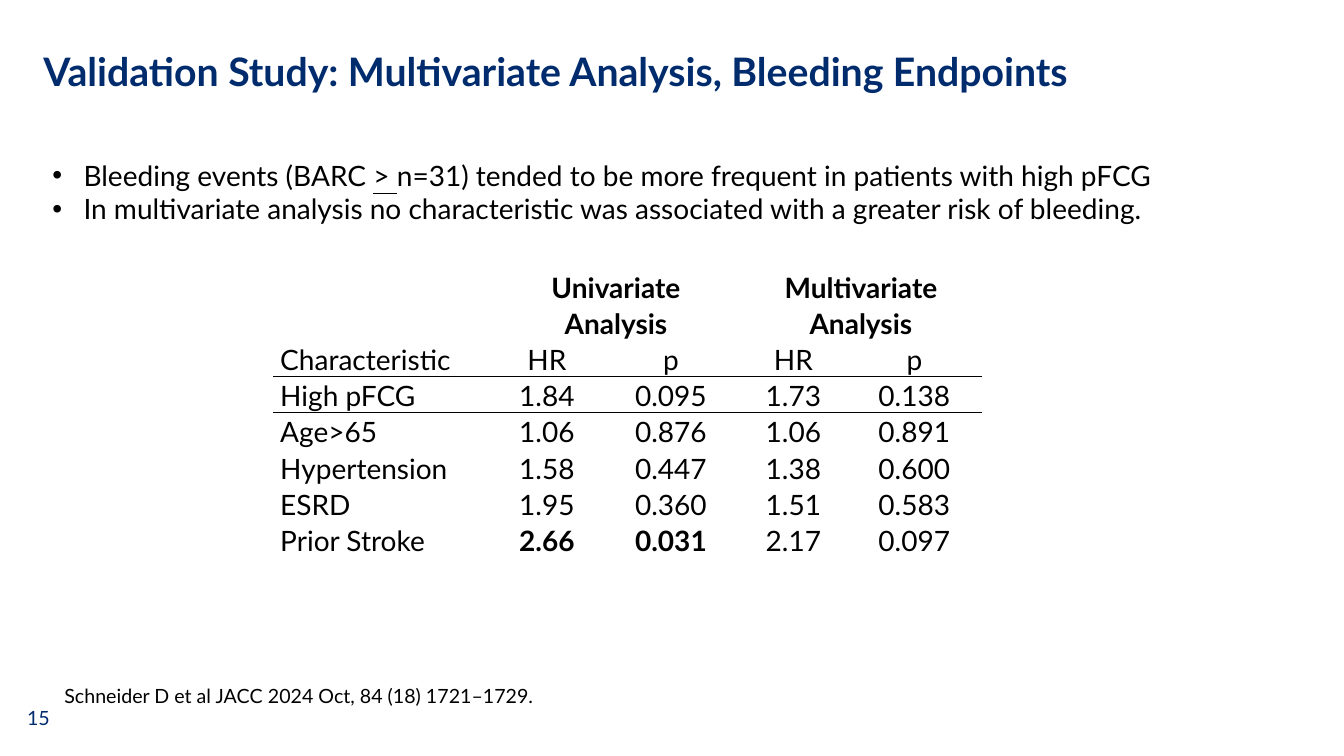
import pptx
import pptx.dml.color
import pptx.enum.shapes
import pptx.enum.text
import pptx.oxml
import pptx.oxml.ns
import pptx.util

Inches = pptx.util.Inches
Pt = pptx.util.Pt
ANCHOR = pptx.enum.text.MSO_ANCHOR
ALIGN = pptx.enum.text.PP_ALIGN
NAVY = pptx.dml.color.RGBColor(0x00, 0x2C, 0x6E)
BLACK = pptx.dml.color.RGBColor(0x00, 0x00, 0x00)
WHITE = pptx.dml.color.RGBColor(0xFF, 0xFF, 0xFF)
NO_GRID_STYLE = "{2D5ABB26-0587-4C30-8999-92F81FD0307C}"


def add_run(paragraph, text, size, color=BLACK, **formats):
    run = paragraph.add_run()
    run.text = text
    run.font.color.rgb = color
    for name, value in {"name": "Lato", "size": Pt(size), **formats}.items():
        setattr(run.font, name, value)


def add_xml(parent, tag, attributes, content="", position=None):
    element = pptx.oxml.parse_xml(
        f"<a:{tag} {pptx.oxml.ns.nsdecls('a')} {attributes}>{content}</a:{tag}>")
    parent.insert(len(parent) if position is None else position, element)


deck = pptx.Presentation()
deck.slide_width, deck.slide_height = Inches(13.33), Inches(7.5)
slide = deck.slides.add_slide(deck.slide_layouts[5])

# Slide number
number = slide.shapes.add_shape(
    pptx.enum.shapes.MSO_SHAPE.RECTANGLE,
    Inches(0.17), Inches(6.92), Inches(0.51), Inches(0.4))
number.shadow.inherit = False
number.fill.solid()
number.fill.fore_color.rgb = WHITE
number.line.fill.background()
number.text_frame.vertical_anchor = ANCHOR.MIDDLE
number.text_frame.paragraphs[0].alignment = ALIGN.LEFT
add_run(number.text_frame.paragraphs[0], "15", 14, NAVY)

# Title
title = slide.shapes.title
place = {"left": 0.33, "top": 0.23, "width": 12.94, "height": 1}
for side, length in place.items():
    setattr(title, side, Inches(length))
title.text_frame.auto_size = pptx.enum.text.MSO_AUTO_SIZE.NONE
title.text_frame.vertical_anchor = ANCHOR.MIDDLE
heading = title.text_frame.paragraphs[0]
heading.alignment = ALIGN.LEFT
heading.line_spacing = 0.9
add_run(heading, "Validation Study: Multivariate Analysis, Bleeding Endpoints",
        28, NAVY, bold=True)

# Citation
citation = slide.shapes.add_textbox(
    Inches(0.54), Inches(6.74), Inches(9.2), Inches(0.34)).text_frame
citation.word_wrap = True
add_run(citation.paragraphs[0],
        "Schneider D et al JACC\u00a02024 Oct, 84 (18) 1721–1729.", 14)

# Hazard ratio table
rows = [
    ("", "Univariate Analysis", "", "Multivariate Analysis", ""),
    ("Characteristic", "HR", "p", "HR", "p"),
    ("High pFCG", "1.84", "0.095", "1.73", "0.138"),
    ("Age>65", "1.06", "0.876", "1.06", "0.891"),
    ("Hypertension", "1.58", "0.447", "1.38", "0.600"),
    ("ESRD", "1.95", "0.360", "1.51", "0.583"),
    ("Prior Stroke", "2.66", "0.031", "2.17", "0.097"),
]
column_widths = [2.17, 1.09, 1.37, 1.06, 1.34]
bold_cells = {(0, 1), (0, 3), (6, 1), (6, 2)}
rule_sides = {1: "lnB", 2: "lnT"}
hazards = slide.shapes.add_table(
    len(rows), len(column_widths),
    Inches(2.71), Inches(2.66), Inches(7.03), Inches(2.84)).table
hazards.first_row = hazards.horz_banding = False
hazards._tbl.tblPr[0].text = NO_GRID_STYLE
for column, width in zip(hazards.columns, column_widths):
    column.width = Inches(width)
for start in (1, 3):
    hazards.cell(0, start).merge(hazards.cell(0, start + 1))

cell_format = {"vertical_anchor": ANCHOR.BOTTOM,
               "margin_left": Inches(0.07), "margin_right": Inches(0.07),
               "margin_top": 0, "margin_bottom": 0}
for r, values in enumerate(rows):
    hazards.rows[r].height = Inches(0.36 if r else 0.71)
    for c, value in enumerate(values):
        cell = hazards.cell(r, c)
        for name, setting in cell_format.items():
            setattr(cell, name, setting)
        cell.fill.background()
        if r in rule_sides:
            add_xml(cell._tc.get_or_add_tcPr(), rule_sides[r], 'w="12700"',
                    '<a:solidFill><a:srgbClr val="000000"/></a:solidFill>', 0)
        if value:
            entry = cell.text_frame.paragraphs[0]
            entry.alignment = ALIGN.CENTER if c else ALIGN.LEFT
            entry.line_spacing = 1.07
            add_run(entry, value, 20, bold=(r, c) in bold_cells)

# Findings
findings = [
    [("Bleeding events (BARC ", False), ("> ", True),
     ("n=31) tended to be more frequent in patients with high pFCG", False)],
    [("In multivariate analysis no characteristic was associated with "
      "a greater risk of bleeding.", False)],
]
summary = slide.shapes.add_textbox(
    Inches(0.42), Inches(1.52), Inches(12.55), Inches(0.77)).text_frame
summary.word_wrap = True
for i, parts in enumerate(findings):
    finding = summary.add_paragraph() if i else summary.paragraphs[0]
    properties = finding._p.get_or_add_pPr()
    properties.set("marL", str(Inches(0.31)))
    properties.set("indent", str(-Inches(0.31)))
    add_xml(properties, "buFont", 'typeface="Arial"')
    add_xml(properties, "buChar", 'char="•"')
    for text, underlined in parts:
        add_run(finding, text, 20, underline=underlined)

deck.save("out.pptx")
